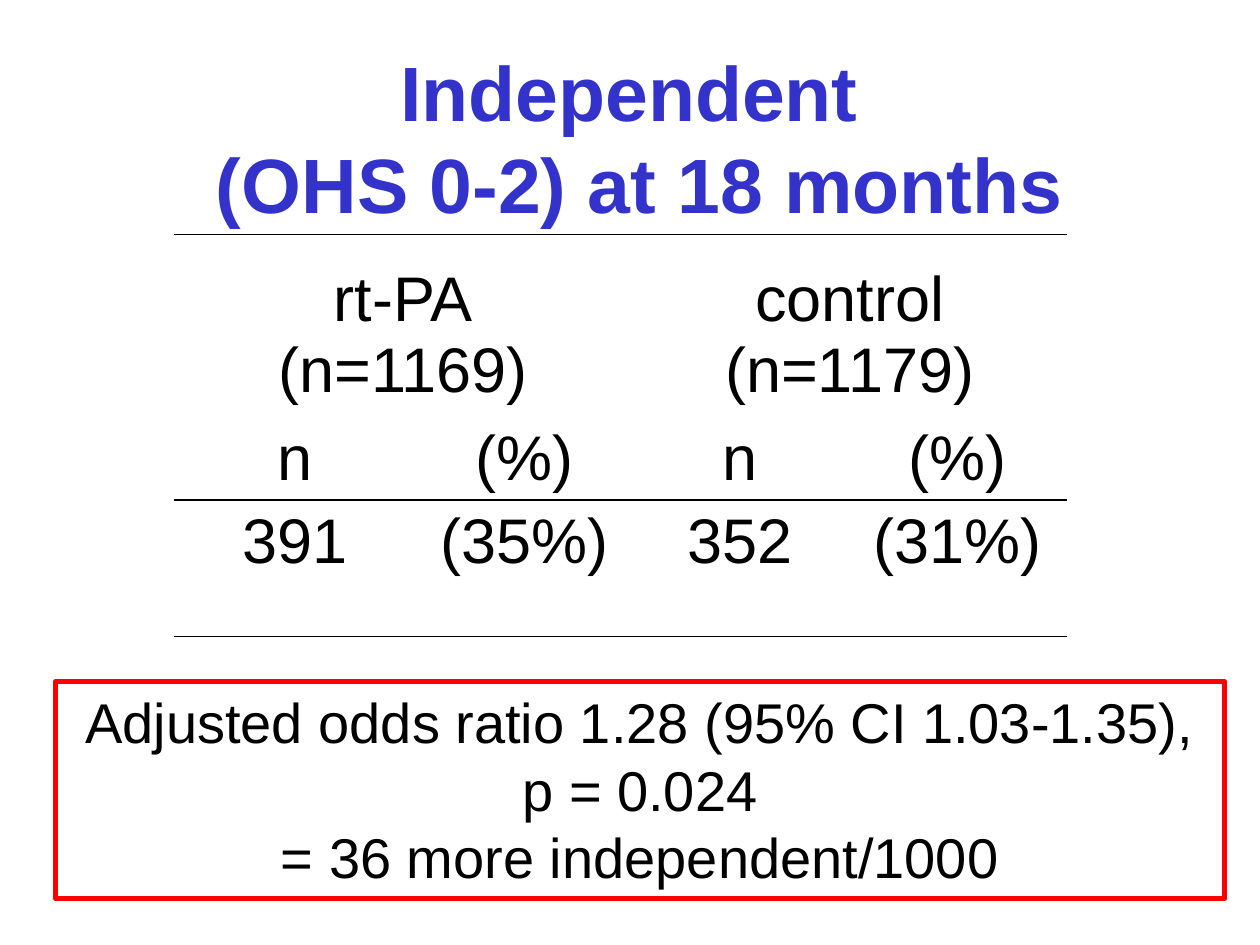
from lxml import etree
from pptx import Presentation, util as u
from pptx.dml.color import RGBColor
from pptx.enum import shapes, text
from pptx.oxml.ns import qn

BLACK, BLUE, RED = "000000", "3333CC", "FF0000"
NO_STYLE = "{2D5ABB26-0587-4C30-8999-92F81FD0307C}"


def color(value):
    return RGBColor.from_string(value)


def write(frame, lines, anchor, size, ink=BLACK, bold=False):
    frame.word_wrap = True
    frame.vertical_anchor = anchor
    frame.text = "\n".join(lines)
    for para in frame.paragraphs:
        para.alignment = text.PP_ALIGN.CENTER
        for name, value in {"name": "Arial", "size": u.Pt(size), "bold": bold}.items():
            setattr(para.font, name, value)
        para.font.color.rgb = color(ink)


deck = Presentation()
deck.slide_width, deck.slide_height = u.Inches(10), u.Inches(7.5)
page = deck.slides.add_slide(deck.slide_layouts[6])
middle, bottom, top = (text.MSO_ANCHOR.MIDDLE, text.MSO_ANCHOR.BOTTOM,
                       text.MSO_ANCHOR.TOP)

# Title, two lines in one paragraph
title = page.shapes.add_textbox(*map(u.Inches, (0.33, 0.25, 9.33, 1.67)))
write(title.text_frame, ["Independent\v (OHS 0-2) at 18 months"], middle, 44, BLUE, True)

# Results table
rows = [
    [["rt-PA", "(n=1169)"], None, ["control", "(n=1179)"], None],
    [["n"], ["(%)"], ["n"], ["(%)"]],
    [["391"], ["(35%)"], ["352"], ["(31%)"]],
]
frame = page.shapes.add_table(3, 4, *map(u.Inches, (1.38, 1.86, 7.09, 3.15)))
table = frame.table
table.first_row = table.horz_banding = False
table._tbl.tblPr.find(qn("a:tableStyleId")).text = NO_STYLE
for column, width in zip(table.columns, (1.93, 1.71, 1.71, 1.74)):
    column.width = u.Inches(width)
for row, height in zip(table.rows, (1.41, 0.66, 1.08)):
    row.height = u.Inches(height)
for left in (0, 2):
    table.cell(0, left).merge(table.cell(0, left + 1))

# Rules above the header, above the results and below them
row_rules = [["lnT"], ["lnB"], ["lnT", "lnB"]]
for r, row in enumerate(rows):
    for c, lines in enumerate(row):
        cell = table.cell(r, c)
        cell.fill.background()
        if lines:
            write(cell.text_frame, lines, top, 36)
            cell.vertical_anchor = top if r == 2 else bottom
            for para in cell.text_frame.paragraphs:
                props = para._p.get_or_add_pPr()
                props.set("marL", str(u.Inches(0.38)))
                props.set("indent", str(-u.Inches(0.38)))
        for place, side in enumerate(row_rules[r]):
            rule = etree.Element(qn(f"a:{side}"), w=str(u.Pt(1)))
            fill = etree.SubElement(rule, qn("a:solidFill"))
            etree.SubElement(fill, qn("a:srgbClr"), val=BLACK)
            cell._tc.get_or_add_tcPr().insert(place, rule)

# Framed conclusion
conclusion = page.shapes.add_shape(
    shapes.MSO_SHAPE.RECTANGLE, *map(u.Inches, (0.44, 5.41, 9.28, 1.72)))
conclusion.shadow.inherit = False
conclusion.fill.background()
conclusion.line.color.rgb = color(RED)
conclusion.line.width = u.Pt(3)
write(conclusion.text_frame,
      ["Adjusted odds ratio 1.28 (95% CI 1.03-1.35), p = 0.024",
       "= 36 more independent/1000"], top, 32)

deck.save("out.pptx")
